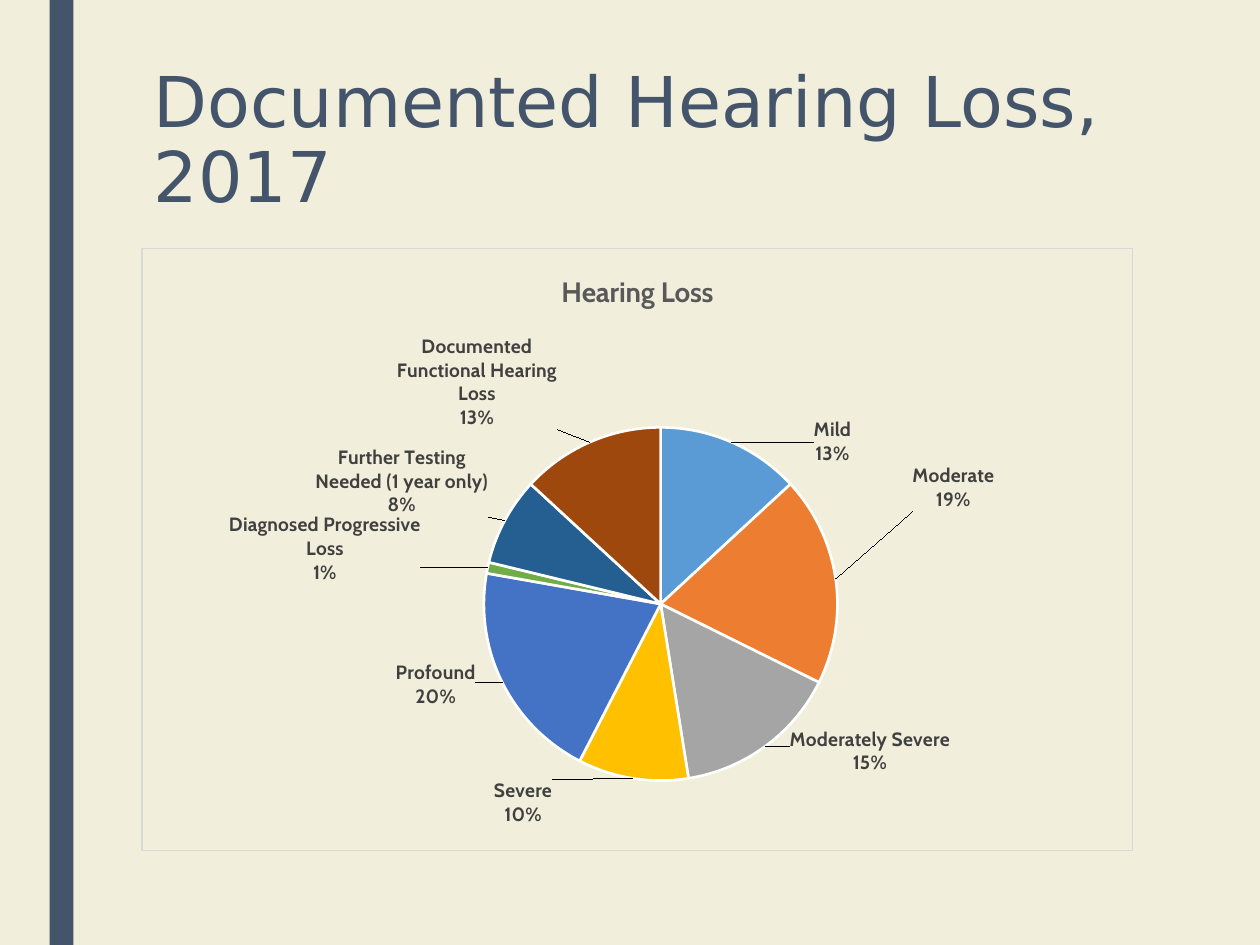
from lxml import etree
from pptx import Presentation
from pptx.chart.data import CategoryChartData
from pptx.dml.color import RGBColor
from pptx.enum.chart import XL_CHART_TYPE as ChartType, XL_LABEL_POSITION as LabelPosition
from pptx.enum.shapes import MSO_SHAPE as Shape
from pptx.enum.text import MSO_ANCHOR as Anchor
from pptx.oxml import parse_xml
from pptx.oxml.ns import nsdecls, qn
from pptx.util import Cm, Pt

NAVY = "44546A"


def color(value):
    return RGBColor.from_string(value)


def format_font(font, name, size, fill, bold=False):
    for key, value in {"name": name, "size": Pt(size), "bold": bold}.items():
        setattr(font, key, value)
    font.color.rgb = color(fill)


presentation = Presentation()
presentation.slide_width, presentation.slide_height = Cm(25.4), Cm(19.05)
slide = presentation.slides.add_slide(presentation.slide_layouts[6])
slide.background.fill.solid()
slide.background.fill.fore_color.rgb = color("F1EEDB")

side_bar = slide.shapes.add_shape(Shape.RECTANGLE, Cm(1), 0, Cm(0.48), Cm(19.05))
side_bar.shadow.inherit = False
side_bar.fill.solid()
side_bar.fill.fore_color.rgb = color(NAVY)
side_bar.line.fill.background()

title = slide.shapes.add_textbox(Cm(2.85), Cm(1.25), Cm(20), Cm(4.1))
title.text_frame.word_wrap = True
title.text_frame.vertical_anchor = Anchor.TOP
paragraph = title.text_frame.paragraphs[0]
paragraph.text = "Documented Hearing Loss, 2017"
paragraph.line_spacing = 0.89
format_font(paragraph.runs[0].font, "DejaVu Sans", 40, NAVY)

# category, percentage, slice color, label shift as a share of the chart size
slices = [
    ("Mild", 13, "5B9BD5", 0.08, 0.05),
    ("Moderate", 19, "ED7D31", 0.07, -0.11),
    ("Moderately Severe", 15, "A5A5A5", 0.02, -0.04),
    ("Severe", 10, "FFC000", -0.08, -0.01),
    ("Profound", 20, "4472C4", -0.02, -0.04),
    ("Diagnosed Progressive Loss", 1, "70AD47", -0.06, 0.03),
    ("Further Testing Needed (1 year only)", 8, "255E91", -0.01, 0),
    ("Documented Functional Hearing Loss", 13, "9E480E", -0.03, -0.01),
]
chart_data = CategoryChartData(number_format="###0")
chart_data.categories = [row[0] for row in slices]
chart_data.add_series("Series 1", [row[1] for row in slices])
chart = slide.shapes.add_chart(
    ChartType.PIE, Cm(2.85), Cm(5), Cm(20), Cm(12.16), chart_data).chart
format_font(chart.font, "Cabin", 10, "000000")
chart.has_legend = False
chart.has_title = True
heading = chart.chart_title.text_frame
heading.text = "Hearing Loss"
format_font(heading.paragraphs[0].runs[0].font, "Cabin", 16, "595959", True)

plot = chart.plots[0]
plot.vary_by_categories = True
series = plot.series[0]
labels = series.data_labels
label_format = {"show_percentage": True, "show_category_name": True,
                "show_value": False, "position": LabelPosition.BEST_FIT}
for key, value in label_format.items():
    setattr(labels, key, value)
format_font(labels.font, "Cabin", 11, "404040", True)

for index, (_, _, fill, _, _) in enumerate(slices):
    point = series.points[index]
    point.format.fill.solid()
    point.format.fill.fore_color.rgb = color(fill)
    point.format.line.color.rgb = color("FFFFFF")
    point.format.line.width = Pt(1.5)
    format_font(point.data_label.font, "Cabin", 11, "404040", True)
    point.data_label.position = LabelPosition.BEST_FIT

chart_space = chart.element
for label, (_, _, _, shift_x, shift_y) in zip(chart_space.xpath(".//c:dLbl"), slices):
    label.find(qn("c:idx")).addnext(parse_xml(
        f'<c:layout {nsdecls("c")}><c:manualLayout><c:x val="{shift_x}"/>'
        f'<c:y val="{shift_y}"/></c:manualLayout></c:layout>'))
    for tag, shown in (("showVal", "0"), ("showCatName", "1"), ("showPercent", "1")):
        label.find(qn(f"c:{tag}")).set("val", shown)
for bubble in chart_space.xpath(".//c:ser//c:showBubbleSize"):
    separator = etree.Element(qn("c:separator"))
    separator.text = "\n"
    bubble.addnext(separator)

plot_area = chart_space.xpath(".//c:plotArea")[0]
for layout in plot_area.findall(qn("c:layout")):
    plot_area.remove(layout)
plot_area.insert(0, parse_xml(
    f'<c:layout {nsdecls("c")}><c:manualLayout><c:layoutTarget val="inner"/>'
    '<c:xMode val="edge"/><c:yMode val="edge"/><c:x val="0.345"/><c:y val="0.297"/>'
    '<c:w val="0.357"/><c:h val="0.587"/></c:manualLayout></c:layout>'))
chart_space.find(qn("c:chart")).addnext(parse_xml(
    f'<c:spPr {nsdecls("c", "a")}><a:noFill/><a:ln w="9525"><a:solidFill>'
    '<a:srgbClr val="D9D9D9"/></a:solidFill></a:ln></c:spPr>'))

presentation.save("out.pptx")
